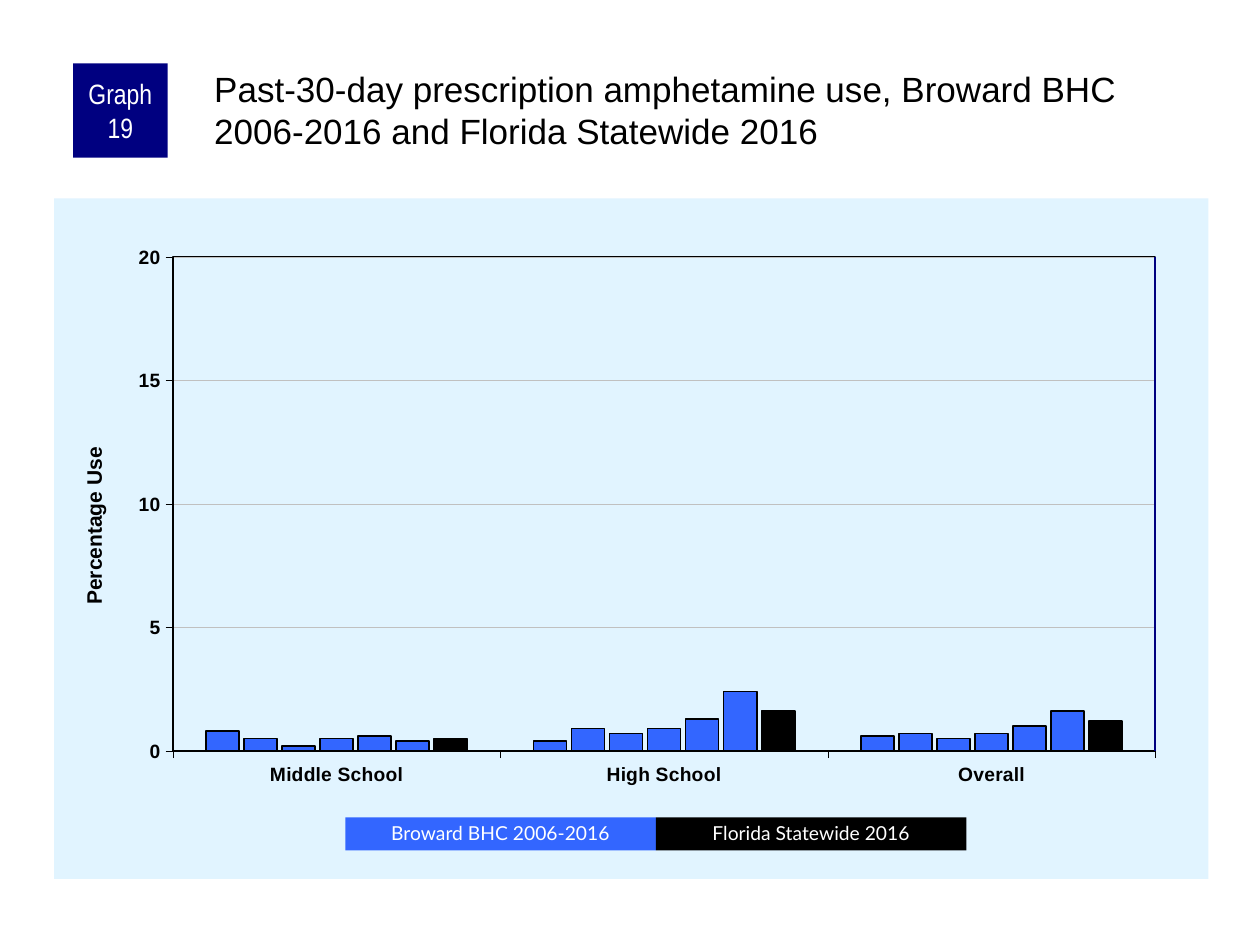
from dataclasses import dataclass

from lxml.etree import SubElement as Sub
from pptx import Presentation
from pptx.chart.data import CategoryChartData as Data
from pptx.dml.color import RGBColor as Rgb
from pptx.enum.chart import XL_CHART_TYPE as Kind, XL_TICK_MARK as Tick
from pptx.enum.shapes import MSO_CONNECTOR as Link, MSO_SHAPE as Form
from pptx.enum.text import MSO_ANCHOR as Anchor, PP_ALIGN as Align
from pptx.oxml import parse_xml
from pptx.oxml.ns import nsdecls, qn
from pptx.util import Inches, Pt


@dataclass(frozen=True)
class Theme:
    navy: str = "000080"
    blue: str = "3366FF"
    black: str = "000000"
    white: str = "FFFFFF"
    pale: str = "E1F4FF"
    grid: str = "C0C0C0"
    head: int = 20
    badge: int = 16
    title: int = 12
    label: int = 11
    base: int = 8
    font: str = "Arial"
    thin: float = 0.25
    edge: float = 1


@dataclass(frozen=True)
class Box:
    """Position and size as shares of the slide."""
    x: float
    y: float
    w: float
    h: float

    def emu(self) -> list:
        return [int(part * side) for part, side in
                zip((self.x, self.y, self.w, self.h), (WIDE, HIGH) * 2)]


@dataclass(frozen=True)
class Panel:
    text: str
    box: Box
    fill: str
    size: int
    font: str
    space: float = 1
    pad: tuple = (0.1, 0.05, 0.1, 0.05)


THEME = Theme()
WIDE, HIGH = Inches(10), Inches(7.5)
AREA = Box(0.043, 0.21, 0.916, 0.72)
PLOT = Box(0.103, 0.086, 0.851, 0.726)
KEY_W = 0.2465
KEYS = [("Broward BHC 2006-2016", THEME.blue),
        ("Florida Statewide 2016", THEME.black)]
PANELS = [Panel("Graph 19", Box(0.058, 0.067, 0.075, 0.1), THEME.navy,
                THEME.badge, "Arial Narrow", pad=(0.05, 0, 0.05, 0))]
PANELS += [Panel(name, Box(0.274 + i * KEY_W, 0.865, KEY_W, 0.035), fill,
                 THEME.label, "Lato", 0.9)
           for i, (name, fill) in enumerate(KEYS)]
RATES = {
    "Middle School": (0.8, 0.5, 0.2, 0.5, 0.6, 0.4, 0.5),
    "High School": (0.4, 0.9, 0.7, 0.9, 1.3, 2.4, 1.6),
    "Overall": (0.6, 0.7, 0.5, 0.7, 1, 1.6, 1.2),
}


def apply(item, **values) -> None:
    for name, value in values.items():
        setattr(item, name, value)


def style(font, size: int, color: str, name: str = THEME.font,
          bold: bool = False) -> None:
    apply(font, size=Pt(size), name=name, bold=bold)
    font.color.rgb = Rgb.from_string(color)


def paint(fill, color: str) -> None:
    fill.solid()
    fill.fore_color.rgb = Rgb.from_string(color)


def stroke(line, color: str, width: float) -> None:
    paint(line.fill, color)
    line.width = Pt(width)


def inset(frame, pad: tuple) -> None:
    sides = ("left", "top", "right", "bottom")
    apply(frame, word_wrap=True,
          **{f"margin_{side}": Inches(gap) for side, gap in zip(sides, pad)})


def draw_panel(slide, panel: Panel) -> None:
    shape = slide.shapes.add_shape(Form.RECTANGLE, *panel.box.emu())
    shape.shadow.inherit = False
    paint(shape.fill, panel.fill)
    shape.line.fill.background()
    frame = shape.text_frame
    inset(frame, panel.pad)
    frame.vertical_anchor = Anchor.MIDDLE
    para = frame.paragraphs[0]
    apply(para, text=panel.text, alignment=Align.CENTER,
          line_spacing=panel.space)
    style(para.runs[0].font, panel.size, THEME.white, panel.font)


def draw_head(slide, text: str, box: Box) -> None:
    frame = slide.shapes.add_textbox(*box.emu()).text_frame
    inset(frame, (0.03, 0.03, 0, 0))
    frame.text = text
    style(frame.paragraphs[0].runs[0].font, THEME.head, THEME.black)


def place(node, index: int, values: dict) -> None:
    """Give a chart part a manual layout."""
    for old in node.findall(qn("c:layout")):
        node.remove(old)
    layout = parse_xml(f"<c:layout {nsdecls('c')}/>")
    manual = Sub(layout, qn("c:manualLayout"))
    for name, value in values.items():
        Sub(manual, qn(f"c:{name}")).set("val", str(value))
    node.insert(index, layout)


def shade(fill: str, line: str = ""):
    """Make the format of a chart area, with an edge if a line is named."""
    def solid(color: str) -> str:
        return f'<a:solidFill><a:srgbClr val="{color}"/></a:solidFill>'
    edge = solid(line) if line else "<a:noFill/>"
    return parse_xml(f'<c:spPr {nsdecls("c", "a")}>{solid(fill)}'
                     f'<a:ln w="{Pt(THEME.edge)}">{edge}</a:ln></c:spPr>')


def draw_chart(slide) -> None:
    data = Data()
    data.categories = list(RATES)
    for i, rates in enumerate(zip(*RATES.values()), 1):
        data.add_series(f"Series {i}", rates)
    chart = slide.shapes.add_chart(Kind.COLUMN_CLUSTERED, *AREA.emu(),
                                   data).chart
    apply(chart, has_legend=False, has_title=False)
    style(chart.font, THEME.base, THEME.black)
    plot = chart.plots[0]
    apply(plot, gap_width=200, overlap=-15, vary_by_categories=False)
    last = len(plot.series) - 1
    for i, bars in enumerate(plot.series):
        paint(bars.format.fill, THEME.black if i == last else THEME.blue)
        stroke(bars.format.line, THEME.black, THEME.edge)

    rate = chart.value_axis
    for axis in (chart.category_axis, rate):
        apply(axis, major_tick_mark=Tick.OUTSIDE, minor_tick_mark=Tick.NONE)
        style(axis.tick_labels.font, THEME.label, THEME.black, bold=True)
        stroke(axis.format.line, THEME.black, THEME.thin)
    apply(rate, minimum_scale=0, maximum_scale=20, major_unit=5,
          has_major_gridlines=True)
    apply(rate.tick_labels, number_format="0", number_format_is_linked=False)
    stroke(rate.major_gridlines.format.line, THEME.grid, THEME.thin)
    title = rate.axis_title
    title.text_frame.text = "Percentage Use"
    style(title.text_frame.paragraphs[0].runs[0].font, THEME.title,
          THEME.black, bold=True)
    title.text_frame._txBody.bodyPr.set("rot", "-5400000")
    place(title._element, 1,
          dict(xMode="edge", yMode="edge", x=0.02, y=0.36))

    root = chart._chartSpace.chart
    area = root.plotArea
    place(area, 0, dict(layoutTarget="inner", xMode="edge", yMode="edge",
                        x=PLOT.x, y=PLOT.y, w=PLOT.w, h=PLOT.h))
    area.append(shade(THEME.pale, THEME.black))
    root.addnext(shade(THEME.pale))


def draw_side(slide) -> None:
    """Mark the right side of the plot."""
    x = AREA.x + AREA.w * (PLOT.x + PLOT.w)
    top = AREA.y + AREA.h * PLOT.y
    left, start, _, tall = Box(x, top, 0, AREA.h * PLOT.h).emu()
    side = slide.shapes.add_connector(Link.STRAIGHT, left, start, left,
                                      start + tall)
    stroke(side.line, THEME.navy, THEME.edge)
    Sub(side._element.spPr, qn("a:effectLst"))


def main() -> None:
    deck = Presentation()
    apply(deck, slide_width=WIDE, slide_height=HIGH)
    slide = deck.slides.add_slide(deck.slide_layouts[6])
    draw_chart(slide)
    draw_side(slide)
    draw_head(slide, "Past-30-day prescription amphetamine use, Broward BHC "
              "2006-2016 and Florida Statewide 2016",
              Box(0.167, 0.067, 0.792, 0.11))
    for panel in PANELS:
        draw_panel(slide, panel)
    deck.save("out.pptx")


if __name__ == "__main__":
    main()
